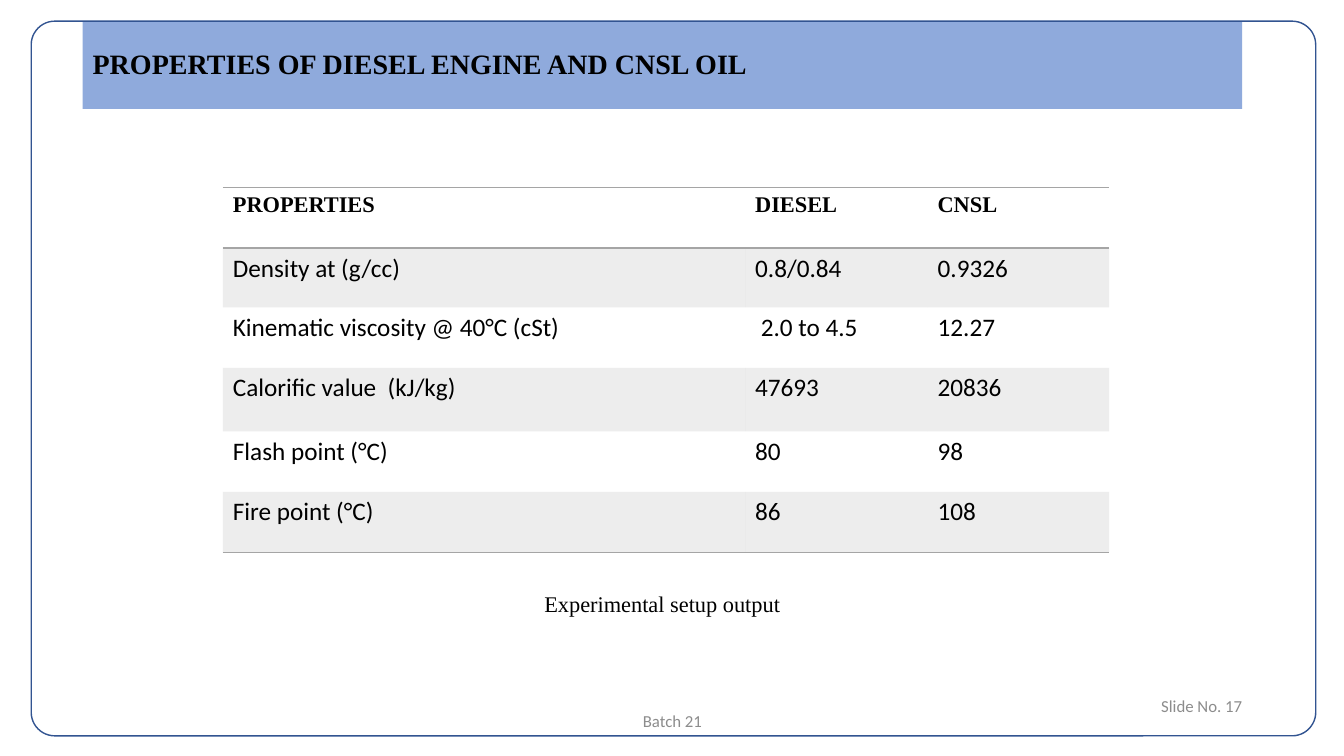
from lxml.etree import SubElement
from pptx import Presentation
from pptx.dml.color import RGBColor
from pptx.enum.shapes import MSO_SHAPE
from pptx.enum.text import MSO_ANCHOR, PP_ALIGN
from pptx.oxml import parse_xml
from pptx.oxml.ns import nsdecls, qn
from pptx.util import Pt

PX = 9144  # EMU, 100 px to the inch
SERIF, SANS = "Times New Roman", "Calibri"
BLACK, GREY, BAND, BLUE, OUTLINE = "000000", "8C8C8C", "A5A5A5", "8FAADC", "325491"
PLAIN_TABLE_STYLE = "{2D5ABB26-0587-4C30-8999-92F81FD0307C}"

COLUMN_WIDTHS = [518, 181, 180]
ROW_HEIGHTS = [60, 59, 60, 63, 60, 60]
PROPERTIES = [
    ("PROPERTIES", "DIESEL", "CNSL"),
    ("Density at (g/cc)", "0.8/0.84", "0.9326"),
    ("Kinematic viscosity @ 40°C (cSt)", " 2.0 to 4.5", "12.27"),
    ("Calorific value  (kJ/kg)", "47693", "20836"),
    ("Flash point (°C)", "80", "98"),
    ("Fire point (°C)", "86", "108"),
]


def rgb(value):
    return RGBColor.from_string(value)


def emu(*lengths):
    return [length * PX for length in lengths]


def write(text_frame, text, size, name, color=BLACK, bold=False, align=PP_ALIGN.LEFT):
    text_frame.text = text
    paragraph = text_frame.paragraphs[0]
    paragraph.alignment = align
    font = paragraph.runs[0].font
    font.size, font.name, font.bold = Pt(size), name, bold
    font.color.rgb = rgb(color)
    return paragraph


def add_title_band(slide, box, text):
    band = slide.shapes.add_shape(MSO_SHAPE.RECTANGLE, *emu(*box))
    band.shadow.inherit = False
    band.fill.solid()
    band.fill.fore_color.rgb = rgb(BLUE)
    band.line.fill.background()
    band.text_frame.vertical_anchor = MSO_ANCHOR.MIDDLE
    write(band.text_frame, text, 20, SERIF, bold=True).line_spacing = 0.9


def add_frame(slide, box):
    frame = slide.shapes.add_shape(MSO_SHAPE.ROUNDED_RECTANGLE, *emu(*box))
    frame.adjustments[0] = 0.033
    frame.shadow.inherit = False
    frame.fill.background()
    frame.line.color.rgb = rgb(OUTLINE)
    frame.line.width = Pt(1)


def add_label(slide, box, text, size, name, color=BLACK, align=PP_ALIGN.LEFT,
              anchor=MSO_ANCHOR.MIDDLE, wrap=True):
    text_frame = slide.shapes.add_textbox(*emu(*box)).text_frame
    text_frame.word_wrap = wrap
    text_frame.vertical_anchor = anchor
    write(text_frame, text, size, name, color, align=align)


def add_borders(cell, sides):
    properties = cell._tc.get_or_add_tcPr()
    for index, side in enumerate(sides):
        properties.insert(index, parse_xml(
            f'<a:ln{side} {nsdecls("a")} w="{Pt(1)}"><a:solidFill>'
            f'<a:srgbClr val="{BAND}"/></a:solidFill></a:ln{side}>'))


def shade(cell):
    """Fill the cell with the band grey at 20 % opacity."""
    cell.fill.solid()
    cell.fill.fore_color.rgb = rgb(BAND)
    color = cell._tc.tcPr.find(".//" + qn("a:srgbClr"))
    SubElement(color, qn("a:alpha"), val="20000")


def add_properties_table(slide, left, top):
    box = emu(left, top, sum(COLUMN_WIDTHS), sum(ROW_HEIGHTS))
    table = slide.shapes.add_table(len(PROPERTIES), len(COLUMN_WIDTHS), *box).table
    table.first_row = table.horz_banding = False
    table._tbl.tblPr.find(qn("a:tableStyleId")).text = PLAIN_TABLE_STYLE
    for column, width in zip(table.columns, COLUMN_WIDTHS):
        column.width = width * PX
    last = len(PROPERTIES) - 1
    for index, (height, values) in enumerate(zip(ROW_HEIGHTS, PROPERTIES)):
        table.rows[index].height = height * PX
        header = index == 0
        size, name = (16, SERIF) if header else (18, SANS)
        for cell, value in zip(table.rows[index].cells, values):
            write(cell.text_frame, value, size, name, bold=header)
            if index % 2:
                shade(cell)
            else:
                cell.fill.background()
            if header:
                add_borders(cell, "TB")
            elif index == last:
                add_borders(cell, "B")


def main():
    presentation = Presentation()
    presentation.slide_width, presentation.slide_height = emu(1333, 750)
    slide = presentation.slides.add_slide(presentation.slide_layouts[6])
    add_title_band(slide, (82, 22, 1150, 86), "PROPERTIES OF DIESEL ENGINE AND CNSL OIL")
    add_label(slide, (442, 695, 450, 40), "Batch 21", 12, SANS, GREY, PP_ALIGN.CENTER)
    add_label(slide, (942, 680, 300, 40), "Slide No. 17", 12, SANS, GREY, PP_ALIGN.RIGHT)
    add_frame(slide, (31, 21, 1274, 709))
    add_properties_table(slide, 221, 186)
    add_label(slide, (530, 581, 258, 37), "Experimental setup output", 16, SERIF,
              anchor=MSO_ANCHOR.TOP, wrap=False)
    presentation.save("out.pptx")


if __name__ == "__main__":
    main()
